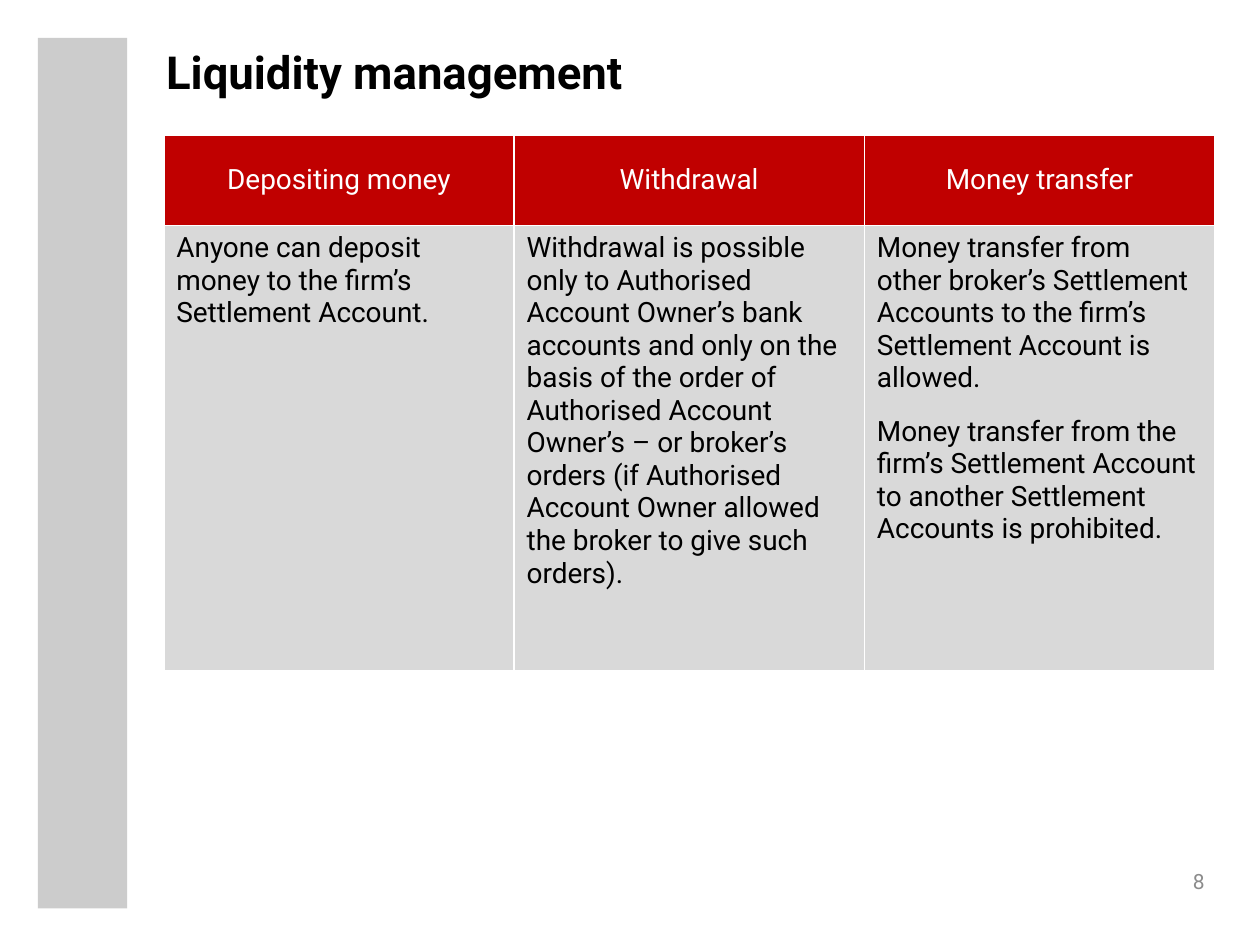
from dataclasses import dataclass

from lxml import etree
from pptx import Presentation
from pptx.dml.color import RGBColor
from pptx.enum.shapes import MSO_SHAPE
from pptx.enum.text import MSO_ANCHOR, PP_ALIGN
from pptx.oxml.ns import qn
from pptx.util import Inches, Pt

RECTANGLE = MSO_SHAPE.RECTANGLE
TOP, MIDDLE = MSO_ANCHOR.TOP, MSO_ANCHOR.MIDDLE
LEFT, CENTER, RIGHT = PP_ALIGN.LEFT, PP_ALIGN.CENTER, PP_ALIGN.RIGHT

TITLE = "Liquidity management"
PAGE_NUMBER = "8"
COLUMNS = [
    ("Depositing money", ["Anyone can deposit money to the firm’s Settlement Account."]),
    ("Withdrawal", [
        "Withdrawal is possible only to Authorised Account Owner’s bank accounts "
        "and only on the basis of the order of Authorised Account Owner’s – or "
        "broker’s orders (if Authorised Account Owner allowed the broker to give "
        "such orders).",
    ]),
    ("Money transfer", [
        "Money transfer from other broker’s Settlement Accounts to the firm’s "
        "Settlement Account is allowed.",
        "Money transfer from the firm’s Settlement Account to another Settlement "
        "Accounts is prohibited.",
    ]),
]


@dataclass(frozen=True)
class Theme:
    font: str = "Roboto"
    black: str = "000000"
    white: str = "FFFFFF"
    red: str = "C00000"
    cell_grey: str = "D9D9D9"
    band_grey: str = "CCCCCC"
    number_grey: str = "8C8C8C"
    title_size: int = 26
    table_size: int = 16
    number_size: int = 12
    paragraph_gap: int = 12
    border_width: int = 1


THEME = Theme()


def write_text(frame, paragraphs, size, color, align=LEFT, bold=False):
    for index, text in enumerate(paragraphs):
        para = frame.paragraphs[0] if index == 0 else frame.add_paragraph()
        para.alignment = align
        if index:
            para.space_before = Pt(THEME.paragraph_gap)
        span = para.add_run()
        span.text = text
        span.font.name = THEME.font
        span.font.size = Pt(size)
        span.font.bold = bold
        span.font.color.rgb = RGBColor.from_string(color)


def add_text_box(page, area, text, **text_format):
    box = page.shapes.add_textbox(*map(Inches, area))
    frame = box.text_frame
    frame.word_wrap = True
    frame.vertical_anchor = MIDDLE
    write_text(frame, [text], **text_format)
    return frame


def add_borders(cell):
    properties = cell._tc.get_or_add_tcPr()
    for index, side in enumerate(("a:lnL", "a:lnR", "a:lnT", "a:lnB")):
        line = etree.Element(qn(side), w=str(Pt(THEME.border_width)))
        fill = etree.SubElement(line, qn("a:solidFill"))
        etree.SubElement(fill, qn("a:srgbClr"), val=THEME.white)
        properties.insert(index, line)


def fill_cell(cell, paragraphs, fill, anchor, **text_format):
    cell.fill.solid()
    cell.fill.fore_color.rgb = RGBColor.from_string(fill)
    cell.vertical_anchor = anchor
    add_borders(cell)
    write_text(cell.text_frame, paragraphs, size=THEME.table_size, **text_format)


def add_side_band(page):
    band = page.shapes.add_shape(RECTANGLE, *map(Inches, (0.3, 0.3, 0.71, 6.91)))
    band.shadow.inherit = False
    band.fill.solid()
    band.fill.fore_color.rgb = RGBColor.from_string(THEME.band_grey)
    band.line.fill.background()


def add_rules_table(page):
    row_heights = (0.72, 3.53)
    area = (1.3, 1.07, 8.34, sum(row_heights))
    table = page.shapes.add_table(2, len(COLUMNS), *map(Inches, area)).table
    for row, height in zip(table.rows, row_heights):
        row.height = Inches(height)
    for index, (heading, paragraphs) in enumerate(COLUMNS):
        table.columns[index].width = Inches(area[2] / len(COLUMNS))
        fill_cell(table.cell(0, index), [heading], THEME.red, MIDDLE,
                  color=THEME.white, align=CENTER)
        fill_cell(table.cell(1, index), paragraphs, THEME.cell_grey, TOP,
                  color=THEME.black)


def main():
    deck = Presentation()
    deck.slide_width, deck.slide_height = Inches(10), Inches(7.5)
    page = deck.slides.add_slide(deck.slide_layouts[6])
    add_side_band(page)
    add_text_box(page, (1.22, 0.29, 8.11, 0.55), TITLE, size=THEME.title_size,
                 color=THEME.black, bold=True)
    number = add_text_box(page, (9.17, 6.77, 0.39, 0.39), PAGE_NUMBER,
                          size=THEME.number_size, color=THEME.number_grey, align=RIGHT)
    number.margin_right = number.margin_bottom = 0
    add_rules_table(page)
    deck.save("out.pptx")


if __name__ == "__main__":
    main()
